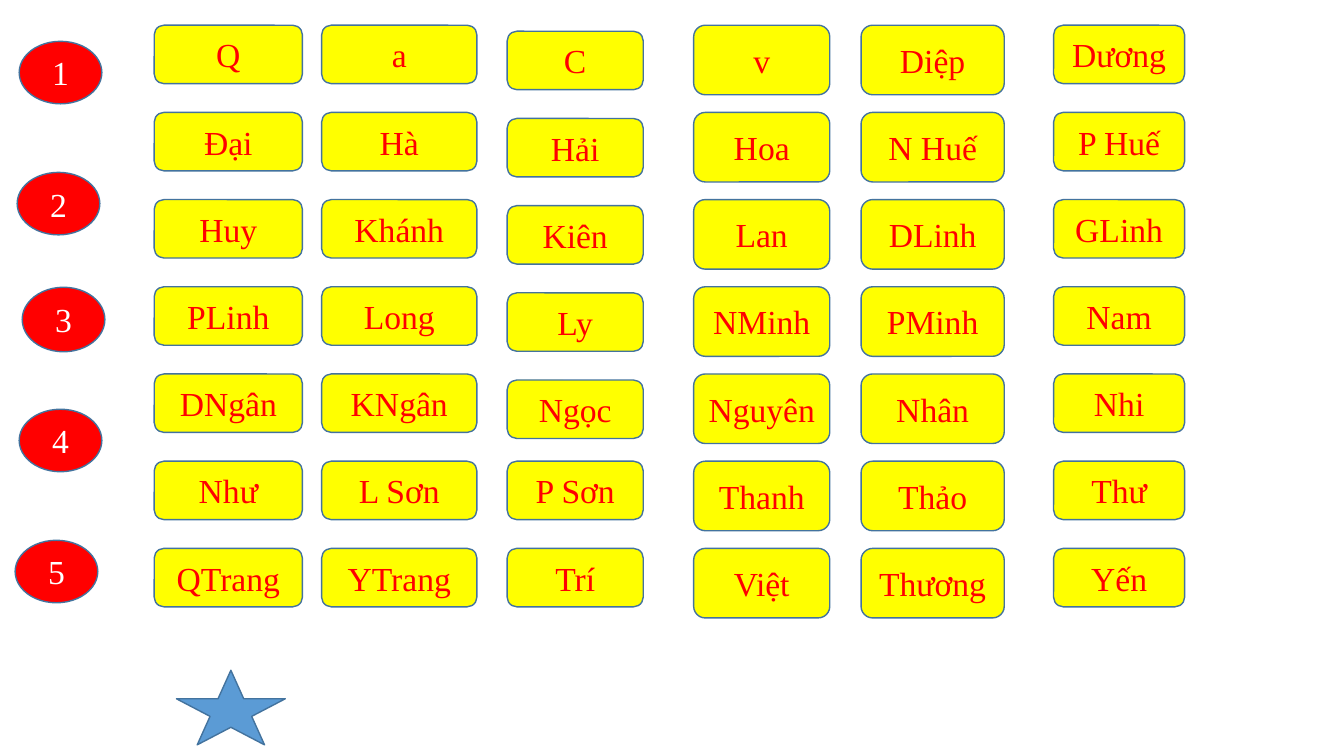
from pptx import Presentation
from pptx.dml.color import RGBColor
from pptx.enum.shapes import MSO_SHAPE
from pptx.enum.text import MSO_ANCHOR, PP_ALIGN
from pptx.util import Inches, Pt

CARD = MSO_SHAPE.ROUNDED_RECTANGLE
OVAL = MSO_SHAPE.OVAL
STAR = MSO_SHAPE.STAR_5_POINT
MIDDLE = MSO_ANCHOR.MIDDLE
CENTER = PP_ALIGN.CENTER

COLORS = {
    "card": "FFFF00",
    "name": "FF0000",
    "badge": "FF0000",
    "number": "FFFFFF",
    "star": "5B9BD5",
    "outline": "43739E",
}

FIRST_TOP = 0.25
ROW_PITCH = 0.865
LOWERED_COLUMN = 2
LOWERED_ROWS = 5
LOWERED_BY = 0.06

# left, width, height, names from top to bottom
NAME_COLUMNS = [
    (1.53, 1.47, 0.58, ["Q", "Đại", "Huy", "PLinh", "DNgân", "Như", "QTrang"]),
    (3.19, 1.54, 0.58, ["a", "Hà", "Khánh", "Long", "KNgân", "L Sơn", "YTrang"]),
    (5.03, 1.35, 0.58, ["C", "Hải", "Kiên", "Ly", "Ngọc", "P Sơn", "Trí"]),
    (6.88, 1.35, 0.69, ["v", "Hoa", "Lan", "NMinh", "Nguyên", "Thanh", "Việt"]),
    (8.54, 1.42, 0.69, ["Diệp", "N Huế", "DLinh", "PMinh", "Nhân", "Thảo", "Thương"]),
    (10.45, 1.3, 0.58, ["Dương", "P Huế", "GLinh", "Nam", "Nhi", "Thư", "Yến"]),
]

# left, top, height
NUMBER_BADGES = [
    (0.19, 0.41, 0.62),
    (0.17, 1.71, 0.62),
    (0.22, 2.85, 0.64),
    (0.19, 4.06, 0.62),
    (0.15, 5.36, 0.62),
]
BADGE_WIDTH = 0.82


def rgb(color):
    return RGBColor.from_string(COLORS[color])


def add_outlined_shape(slide, kind, left, top, width, height, fill):
    shape = slide.shapes.add_shape(
        kind, Inches(left), Inches(top), Inches(width), Inches(height))
    shape.shadow.inherit = False
    shape.fill.solid()
    shape.fill.fore_color.rgb = rgb(fill)
    shape.line.color.rgb = rgb("outline")
    shape.line.width = Pt(1)
    return shape


def write_text(shape, text, *, color, size=24, font="Times New Roman"):
    frame = shape.text_frame
    frame.word_wrap = True
    frame.vertical_anchor = MIDDLE
    paragraph = frame.paragraphs[0]
    paragraph.alignment = CENTER
    run = paragraph.add_run()
    run.text = text
    run.font.name = font
    run.font.size = Pt(size)
    run.font.color.rgb = rgb(color)


def add_name_cards(slide):
    for column, (left, width, height, names) in enumerate(NAME_COLUMNS):
        for row, name in enumerate(names):
            top = FIRST_TOP + row * ROW_PITCH
            if column == LOWERED_COLUMN and row < LOWERED_ROWS:
                top += LOWERED_BY
            card = add_outlined_shape(slide, CARD, left, top, width, height, "card")
            write_text(card, name, color="name")


def add_number_badges(slide):
    for number, (left, top, height) in enumerate(NUMBER_BADGES, start=1):
        badge = add_outlined_shape(
            slide, OVAL, left, top, BADGE_WIDTH, height, "badge")
        write_text(badge, str(number), color="number")


def main():
    deck = Presentation()
    deck.slide_width = Inches(13.33)
    deck.slide_height = Inches(7.5)
    slide = deck.slides.add_slide(deck.slide_layouts[6])
    add_name_cards(slide)
    add_number_badges(slide)
    add_outlined_shape(slide, STAR, 1.75, 6.65, 1.08, 0.74, "star")
    deck.save("out.pptx")


if __name__ == "__main__":
    main()
